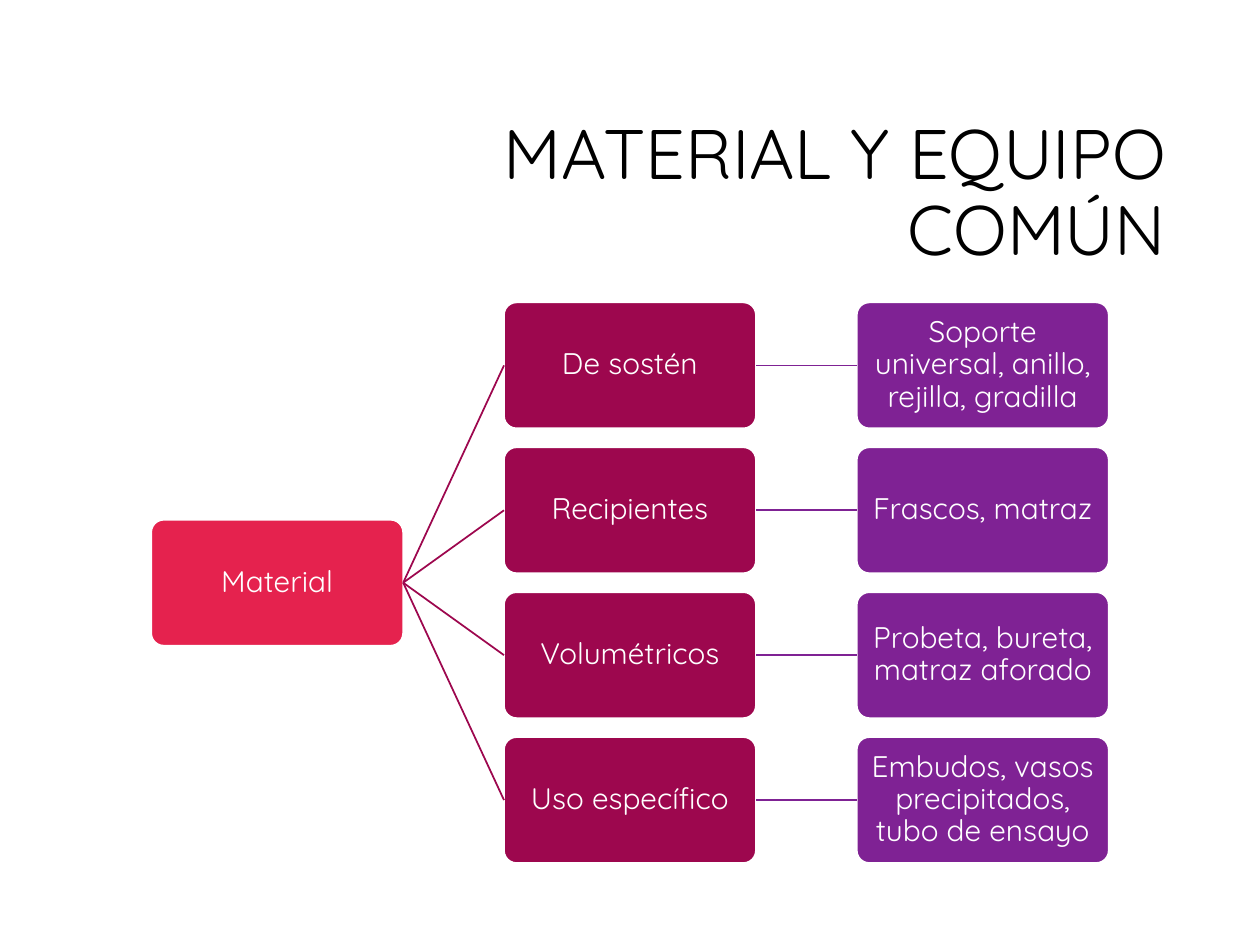
from lxml.etree import SubElement
from pptx import Presentation
from pptx.dml.color import RGBColor
from pptx.enum.shapes import MSO_CONNECTOR, MSO_SHAPE
from pptx.enum.text import MSO_ANCHOR, PP_ALIGN
from pptx.oxml.ns import qn
from pptx.util import Inches, Pt

FONT = "Quicksand"
ROOT, KIND, ITEM = "E5224E", "9D074E", "7F2294"
GROUPS = [
    ("De sostén", "Soporte universal, anillo, rejilla, gradilla"),
    ("Recipientes", "Frascos, matraz"),
    ("Volumétricos", "Probeta, bureta, matraz aforado"),
    ("Uso específico", "Embudos, vasos precipitados, tubo de ensayo"),
]


def color(code):
    return RGBColor.from_string(code)


def write(shape, text, size, ink, align, inset):
    frame = shape.text_frame
    frame.word_wrap = True
    frame.vertical_anchor = MSO_ANCHOR.MIDDLE
    frame.margin_left = frame.margin_right = Inches(inset[0])
    frame.margin_top = frame.margin_bottom = Inches(inset[1])
    para = frame.paragraphs[0]
    para.text = text
    para.alignment = align
    para.line_spacing = 0.9
    para.font.name = FONT
    para.font.size = Pt(size)
    para.font.color.rgb = color(ink)


def add_title(slide, box, text):
    label = slide.shapes.add_textbox(*map(Inches, box))
    write(label, text, 40, "000000", PP_ALIGN.RIGHT, (0.1, 0.05))


def add_node(slide, box, text, fill):
    node = slide.shapes.add_shape(MSO_SHAPE.ROUNDED_RECTANGLE, *map(Inches, box))
    node.adjustments[0] = 0.1
    node.shadow.inherit = False
    node.fill.solid()
    node.fill.fore_color.rgb = color(fill)
    node.line.color.rgb = color("FFFFFF")
    node.line.width = Pt(1)
    write(node, text, 17, "FFFFFF", PP_ALIGN.CENTER, (0.04, 0.04))
    return node


def link(slide, start, end, ink):
    line = slide.shapes.add_connector(MSO_CONNECTOR.STRAIGHT, 0, 0, 0, 0)
    line.begin_connect(start, 3)
    line.end_connect(end, 1)
    line.line.color.rgb = color(ink)
    line.line.width = Pt(1)
    SubElement(line._element.spPr, qn("a:effectLst"))


def add_tree(slide, box, root, groups):
    left, top, width, height = box
    # Three columns with gaps of 0.4 node widths, rows with gaps of 0.15 heights
    wide = width / (3 + 2 * 0.4)
    high = height / (len(groups) + (len(groups) - 1) * 0.15)

    def cell(col, row):
        return left + col * wide * 1.4, top + row * high * 1.15, wide, high

    # Root sits midway down the rows
    base = add_node(slide, cell(0, (len(groups) - 1) / 2), root, ROOT)
    for row, (kind, items) in enumerate(groups):
        branch = add_node(slide, cell(1, row), kind, KIND)
        leaf = add_node(slide, cell(2, row), items, ITEM)
        link(slide, base, branch, KIND)
        link(slide, branch, leaf, ITEM)


def main():
    deck = Presentation()
    deck.slide_width, deck.slide_height = Inches(10), Inches(7.5)
    slide = deck.slides.add_slide(deck.slide_layouts[6])
    add_title(slide, (2.38, 0.84, 6.97, 1.41), "MATERIAL Y EQUIPO COMÚN")
    add_tree(slide, (1.2, 2.4, 7.6, 4.45), "Material", GROUPS)
    deck.save("out.pptx")


if __name__ == "__main__":
    main()
